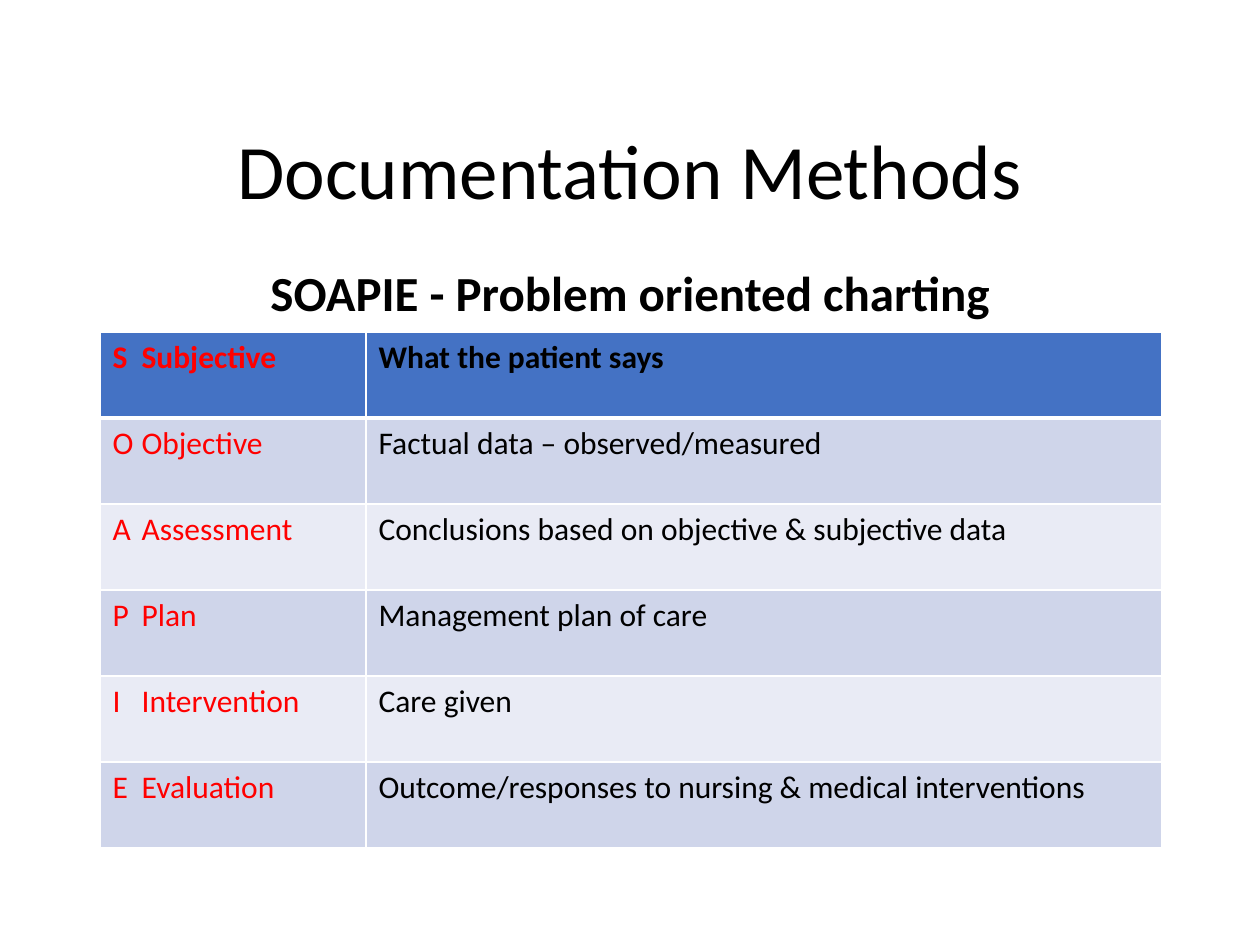
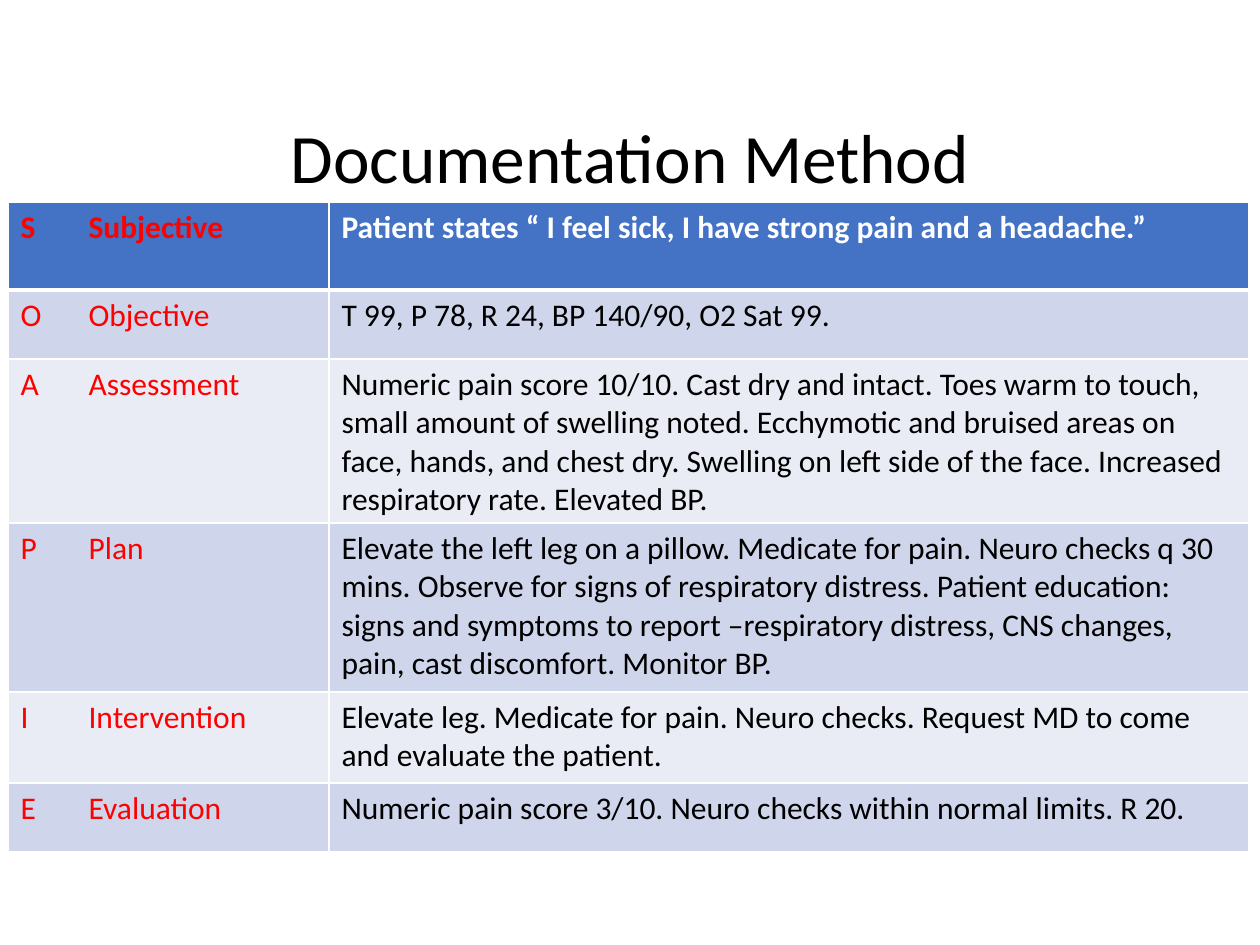
"""Build two slides on SOAPIE charting: the method and a worked example."""
from dataclasses import dataclass

from lxml.etree import SubElement
from pptx import Presentation
from pptx.dml.color import RGBColor
from pptx.enum.text import MSO_ANCHOR, PP_ALIGN
from pptx.oxml.ns import qn
from pptx.util import Emu, Pt

PX_PER_INCH = 126
FONT = "Calibri"
BLACK, WHITE, RED = "000000", "FFFFFF", "FF0000"
HEADER_FILL = "4472C4"
BAND_FILLS = ("E9EBF5", "CFD5EA")
STEPS = ("Subjective", "Objective", "Assessment", "Plan", "Intervention", "Evaluation")


@dataclass(frozen=True)
class Heading:
    text: str
    left: int
    top: int
    width: int
    height: int
    size: float
    bold: bool = False
    anchor: MSO_ANCHOR = MSO_ANCHOR.MIDDLE


@dataclass(frozen=True)
class SoapieTable:
    left: int
    top: int
    columns: tuple[int, ...]
    rows: tuple[int, ...]
    step_indent: int
    header_color: str
    entries: tuple[str, ...]


@dataclass(frozen=True)
class SoapieSlide:
    headings: tuple[Heading, ...]
    table: SoapieTable


SLIDES = (
    SoapieSlide(
        (
            Heading("Documentation Methods", 87, 117, 1086, 116, 44),
            Heading("SOAPIE - Problem oriented charting", 87, 263, 1086, 600, 28,
                    True, MSO_ANCHOR.TOP),
        ),
        SoapieTable(100, 332, (266, 796), (86,) * len(STEPS), 29, BLACK, (
            "What the patient says",
            "Factual data – observed/measured",
            "Conclusions based on objective & subjective data",
            "Management plan of care",
            "Care given",
            "Outcome/responses to nursing & medical interventions",
        )),
    ),
    SoapieSlide(
        (Heading("Documentation Method", 87, 120, 1086, 82, 39.6),),
        SoapieTable(8, 202, (321, 920), (88, 69, 164, 169, 91, 69), 68, WHITE, (
            "Patient states “ I feel sick, I have strong pain and a headache.”",
            "T 99, P 78, R 24, BP 140/90, O2 Sat 99.",
            "Numeric pain score 10/10. Cast dry and intact. Toes warm to touch, "
            "small amount of swelling noted. Ecchymotic and bruised areas on face, "
            "hands, and chest dry. Swelling on left side of the face. Increased "
            "respiratory rate. Elevated BP.",
            "Elevate the left leg on a pillow. Medicate for pain. Neuro checks q 30 "
            "mins. Observe for signs of respiratory distress. Patient education: "
            "signs and symptoms to report –respiratory distress, CNS changes, pain, "
            "cast discomfort. Monitor BP.",
            "Elevate leg. Medicate for pain. Neuro checks. Request MD to come and "
            "evaluate the patient.",
            "Numeric pain score 3/10. Neuro checks within normal limits. R 20.",
        )),
    ),
)


def px(length: int) -> Emu:
    return Emu(round(length * 914400 / PX_PER_INCH))


def rgb(color: str) -> RGBColor:
    return RGBColor.from_string(color)


def add_run(paragraph, text: str, size: float, color: str, bold: bool) -> None:
    run = paragraph.add_run()
    run.text = text
    run.font.name = FONT
    run.font.size = Pt(size)
    run.font.bold = bold
    run.font.color.rgb = rgb(color)


def add_heading(slide, heading: Heading) -> None:
    box = slide.shapes.add_textbox(
        px(heading.left), px(heading.top), px(heading.width), px(heading.height))
    frame = box.text_frame
    frame.word_wrap = True
    frame.vertical_anchor = heading.anchor
    paragraph = frame.paragraphs[0]
    paragraph.alignment = PP_ALIGN.CENTER
    paragraph.line_spacing = 0.9
    add_run(paragraph, heading.text, heading.size, BLACK, heading.bold)


def set_borders(cell, row: int) -> None:
    properties = cell._tc.get_or_add_tcPr()
    heavy_side = {0: "lnB", 1: "lnT"}.get(row)
    for side in ("lnL", "lnR", "lnT", "lnB"):
        weight = Pt(3 if side == heavy_side else 1)
        border = SubElement(properties, qn(f"a:{side}"), w=str(weight))
        fill = SubElement(border, qn("a:solidFill"))
        SubElement(fill, qn("a:srgbClr"), val=WHITE)


def add_tab_stop(paragraph, position: int) -> None:
    tabs = SubElement(paragraph._p.get_or_add_pPr(), qn("a:tabLst"))
    SubElement(tabs, qn("a:tab"), pos=str(px(position)), algn="l")


def add_soapie_table(slide, soapie: SoapieTable) -> None:
    table = slide.shapes.add_table(
        len(soapie.rows), len(soapie.columns), px(soapie.left), px(soapie.top),
        px(sum(soapie.columns)), px(sum(soapie.rows))).table
    for column, width in zip(table.columns, soapie.columns):
        column.width = px(width)
    for row, (step, entry) in enumerate(zip(STEPS, soapie.entries)):
        table.rows[row].height = px(soapie.rows[row])
        is_header = row == 0
        step_cell, entry_cell = table.cell(row, 0), table.cell(row, 1)
        for cell in (step_cell, entry_cell):
            set_borders(cell, row)
            cell.fill.solid()
            cell.fill.fore_color.rgb = rgb(HEADER_FILL if is_header else BAND_FILLS[row % 2])
        step_line = step_cell.text_frame.paragraphs[0]
        add_tab_stop(step_line, soapie.step_indent)
        add_run(step_line, f"{step[0]}\t{step}", 18, RED, is_header)
        entry_color = soapie.header_color if is_header else BLACK
        add_run(entry_cell.text_frame.paragraphs[0], entry, 18, entry_color, is_header)


def main() -> None:
    deck = Presentation()
    deck.slide_width, deck.slide_height = px(1260), px(945)
    for content in SLIDES:
        slide = deck.slides.add_slide(deck.slide_layouts[6])
        slide.background.fill.solid()
        slide.background.fill.fore_color.rgb = rgb(WHITE)
        for heading in content.headings:
            add_heading(slide, heading)
        add_soapie_table(slide, content.table)
    deck.save("out.pptx")


if __name__ == "__main__":
    main()
